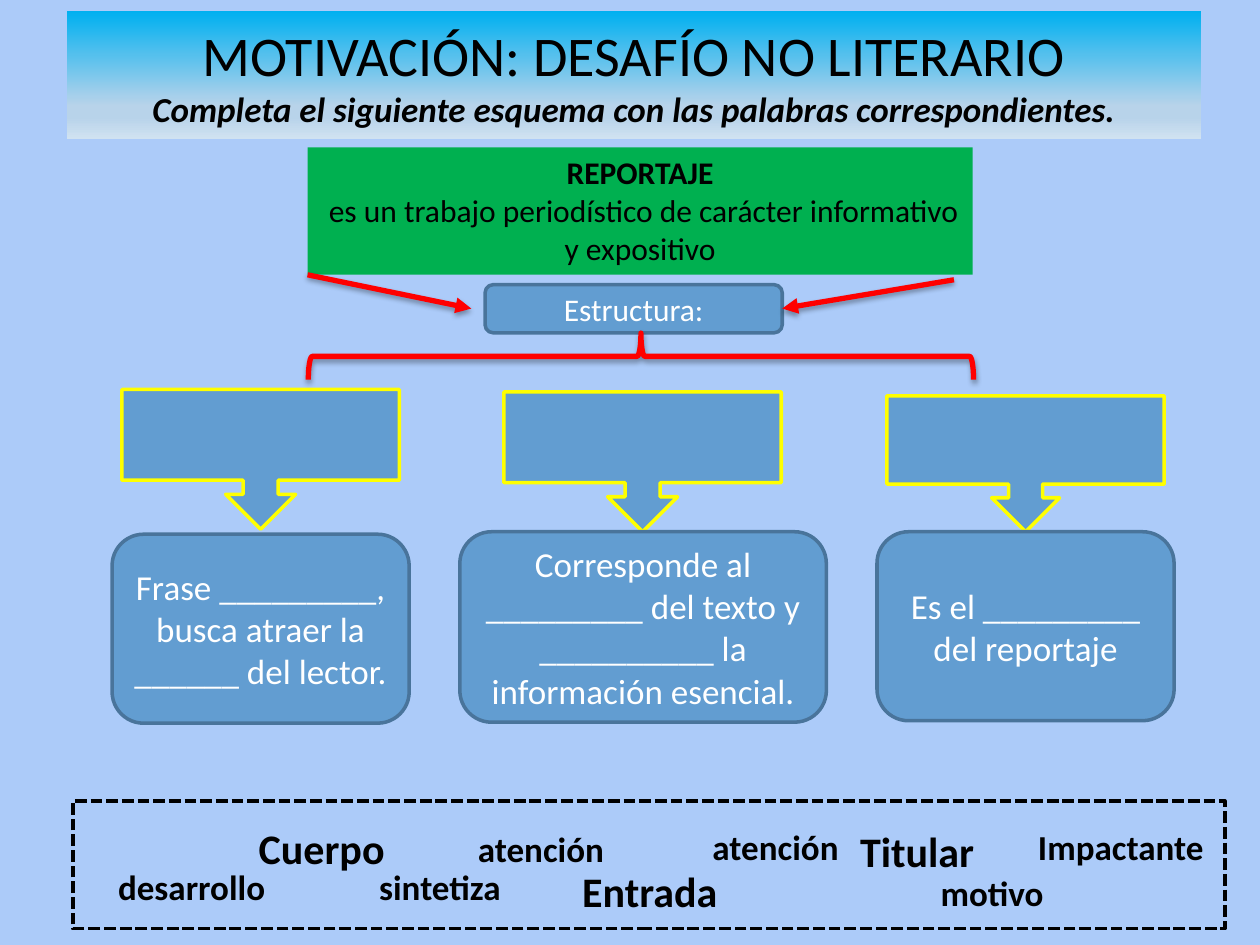
from lxml.etree import SubElement
from pptx import Presentation
from pptx.dml.color import RGBColor
from pptx.enum.dml import MSO_LINE_DASH_STYLE as Dash
from pptx.enum.shapes import MSO_CONNECTOR as Connector, MSO_SHAPE as Shape
from pptx.enum.text import MSO_ANCHOR as Anchor, MSO_AUTO_SIZE as AutoSize, PP_ALIGN as Align
from pptx.oxml.ns import qn
from pptx.util import Cm, Pt

SKY = RGBColor(0xAC, 0xCB, 0xF9)
BLUE = RGBColor(0x62, 0x9D, 0xD1)
DARK_BLUE = RGBColor(0x49, 0x74, 0x9B)
GREEN = RGBColor(0x00, 0xB0, 0x50)
RED = RGBColor(0xFF, 0x00, 0x00)
YELLOW = RGBColor(0xFF, 0xFF, 0x00)
BLACK = RGBColor(0x00, 0x00, 0x00)
WHITE = RGBColor(0xFF, 0xFF, 0xFF)
TITLE_STOPS = [
    (0, RGBColor(0x00, 0xB0, 0xF0)),
    (74, RGBColor(0xB8, 0xD3, 0xEA)),
    (83, RGBColor(0xB8, 0xD3, 0xEA)),
    (100, RGBColor(0xD0, 0xE2, 0xF1)),
]

# Left, top, width, height in centimetres
CALLOUTS = [(2.46, 7.85, 5.59, 2.82), (10.16, 7.9, 5.59, 2.82), (17.88, 7.98, 5.59, 2.74)]
DEFINITIONS = [
    ("Frase _________, busca atraer la ______ del lector.", (2.26, 10.77, 5.99, 3.81)),
    ("Corresponde al _________ del texto y __________ la información esencial.",
     (9.27, 10.72, 7.39, 3.84)),
    ("Es el _________ del reportaje", (17.68, 10.72, 5.99, 3.81)),
]
# Word, size in points, left, top and width in centimetres
WORD_BANK = [
    ("Cuerpo", 24, 4.95, 16.46, 3.07),
    ("Entrada", 24, 11.46, 17.32, 3.28),
    ("Titular", 24, 17.07, 16.51, 2.84),
    ("atención", 20, 9.37, 16.56, 3.07),
    ("Impactante", 20, 20.65, 16.51, 3.89),
    ("atención", 20, 14.1, 16.51, 3.07),
    ("motivo", 20, 18.69, 17.45, 2.62),
    ("sintetiza", 20, 7.37, 17.32, 3),
    ("desarrollo", 20, 2.11, 17.32, 3.51),
]


class DiagramSlide:
    font_name = "Calibri"

    def __init__(self, presentation):
        self.slide = presentation.slides.add_slide(presentation.slide_layouts[5])
        background = self.slide.background.fill
        background.solid()
        background.fore_color.rgb = SKY

    def run(self, paragraph, text, size, color=BLACK, bold=False, italic=False):
        paragraph.alignment = Align.CENTER
        run = paragraph.add_run()
        run.text = text
        font = run.font
        font.name, font.size = self.font_name, Pt(size)
        font.bold, font.italic = bold, italic
        font.color.rgb = color

    def title(self, box, heading, instruction):
        shape = self.slide.shapes.title
        shape.left, shape.top, shape.width, shape.height = map(Cm, box)
        shape.fill.gradient()
        shape.fill.gradient_angle = 270
        stops = shape.element.spPr.find(".//" + qn("a:gsLst"))
        stops.clear()
        for position, color in TITLE_STOPS:
            stop = SubElement(stops, qn("a:gs"), pos=str(position * 1000))
            SubElement(stop, qn("a:srgbClr"), val=str(color))
        frame = shape.text_frame
        frame.auto_size = AutoSize.NONE
        frame.vertical_anchor = Anchor.MIDDLE
        paragraph = frame.paragraphs[0]
        self.run(paragraph, heading, 32)
        paragraph.add_line_break()
        self.run(paragraph, instruction, 20, bold=True, italic=True)

    def shape(self, kind, box, fill=None, line=None, width=2):
        shape = self.slide.shapes.add_shape(kind, *map(Cm, box))
        shape.shadow.inherit = False
        if fill is None:
            shape.fill.background()
        else:
            shape.fill.solid()
            shape.fill.fore_color.rgb = fill
        if line is None:
            shape.line.fill.background()
        else:
            shape.line.color.rgb = line
            shape.line.width = Pt(width)
        return shape

    def rounded_box(self, text, box, size):
        shape = self.shape(Shape.ROUNDED_RECTANGLE, box, BLUE, DARK_BLUE)
        frame = shape.text_frame
        frame.word_wrap = True
        frame.vertical_anchor = Anchor.MIDDLE
        self.run(frame.paragraphs[0], text, size, WHITE)

    def topic(self, box, name, definition):
        frame = self.shape(Shape.RECTANGLE, box, GREEN).text_frame
        frame.word_wrap = True
        frame.vertical_anchor = Anchor.TOP
        self.run(frame.paragraphs[0], name, 18, bold=True)
        self.run(frame.add_paragraph(), definition, 18)

    def arrow(self, start, end):
        connector = self.slide.shapes.add_connector(
            Connector.STRAIGHT, *map(Cm, start + end))
        connector.line.color.rgb = RED
        connector.line.width = Pt(3)
        properties = connector.element.spPr
        SubElement(properties.find(qn("a:ln")), qn("a:tailEnd"), type="triangle")
        self.soft_shadow(SubElement(properties, qn("a:effectLst")))

    def brace(self, box):
        shape = self.shape(Shape.LEFT_BRACE, box, line=RED, width=3)
        shape.rotation = 90
        self.soft_shadow(shape.element.spPr.find(qn("a:effectLst")))

    def soft_shadow(self, effects):
        shadow = SubElement(effects, qn("a:outerShdw"), blurRad=str(Pt(3.1)),
                            dist=str(Pt(1.8)), dir="5400000", rotWithShape="0")
        color = SubElement(shadow, qn("a:srgbClr"), val=str(BLACK))
        SubElement(color, qn("a:alpha"), val="35000")

    def word(self, text, size, left, top, width):
        height = 1.27 if size == 24 else 1.12
        box = self.slide.shapes.add_textbox(*map(Cm, (left, top, width, height)))
        frame = box.text_frame
        frame.word_wrap = False
        frame.auto_size = AutoSize.SHAPE_TO_FIT_TEXT
        self.run(frame.paragraphs[0], text, size, bold=True)


def main():
    presentation = Presentation()
    presentation.slide_width, presentation.slide_height = Cm(25.4), Cm(19.05)
    diagram = DiagramSlide(presentation)

    diagram.title((1.35, 0.23, 22.86, 2.57), "MOTIVACIÓN: DESAFÍO NO LITERARIO",
                  "Completa el siguiente esquema con las palabras correspondientes.")
    for box in CALLOUTS:
        diagram.shape(Shape.DOWN_ARROW_CALLOUT, box, BLUE, YELLOW)
    diagram.topic((6.2, 2.97, 13.41, 2.57), "REPORTAJE",
                  " es un trabajo periodístico de carácter informativo y expositivo")
    diagram.rounded_box("Estructura:", (9.78, 5.74, 5.99, 0.97), 18)
    diagram.arrow((6.2, 5.54), (9.5, 6.22))
    diagram.arrow((19.23, 5.64), (15.77, 6.22))
    for text, box in DEFINITIONS:
        diagram.rounded_box(text, box, 20)
    diagram.brace((12.45, 0.48, 0.94, 13.41))

    word_frame = diagram.shape(Shape.RECTANGLE, (1.47, 16.15, 23.22, 2.57),
                               line=BLACK, width=2.25)
    word_frame.line.dash_style = Dash.SQUARE_DOT
    for entry in WORD_BANK:
        diagram.word(*entry)

    presentation.save("out.pptx")


if __name__ == "__main__":
    main()
